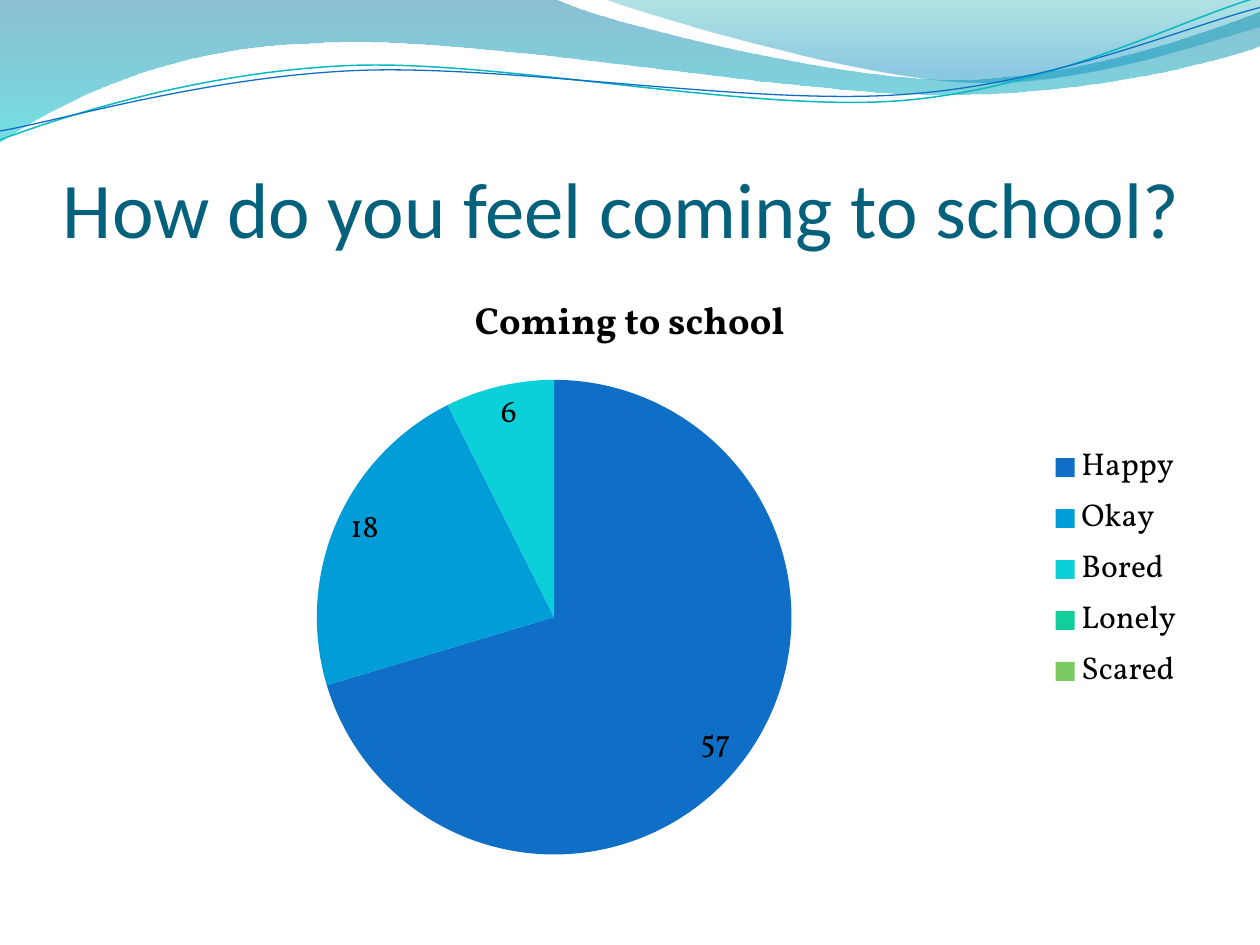
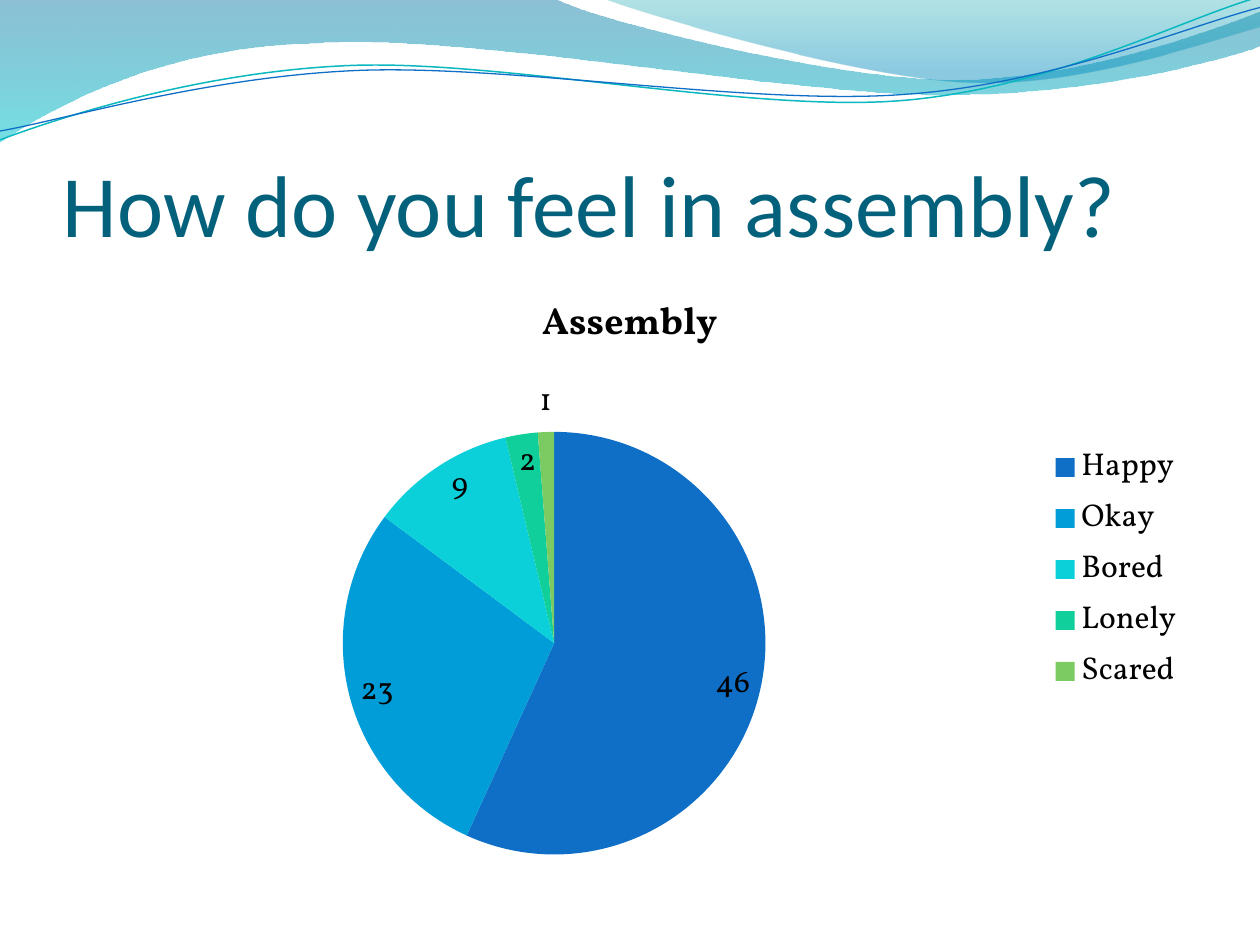
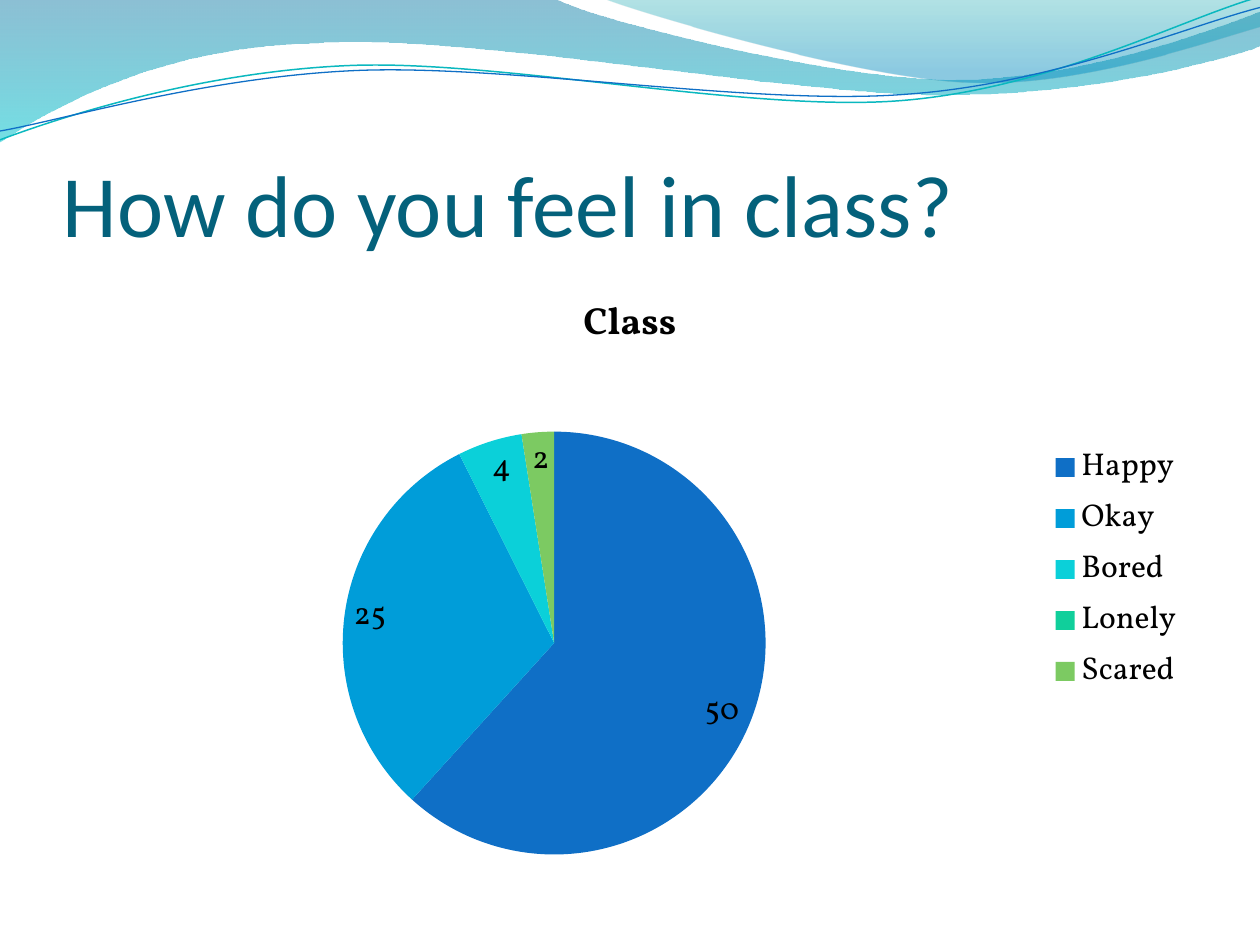
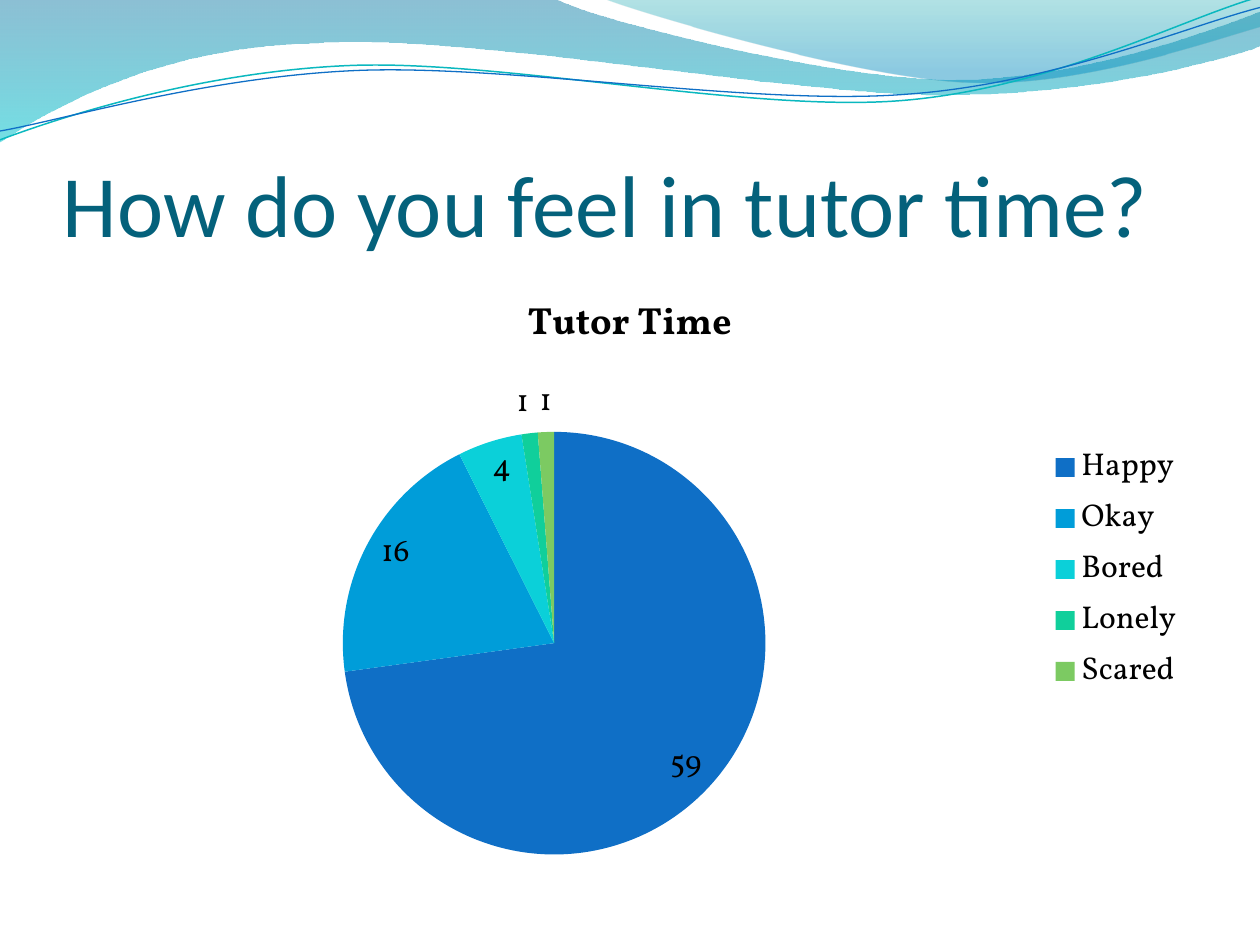
from dataclasses import dataclass
from math import cos, radians, sin

from lxml.etree import SubElement
from pptx import Presentation
from pptx.chart.data import CategoryChartData
from pptx.dml.color import RGBColor
from pptx.enum.chart import XL_CHART_TYPE as ChartType
from pptx.enum.chart import XL_LABEL_POSITION as LabelPosition
from pptx.enum.chart import XL_LEGEND_POSITION as LegendPosition
from pptx.enum.text import MSO_ANCHOR as Anchor
from pptx.oxml import parse_xml
from pptx.oxml.ns import nsdecls, qn
from pptx.shapes.autoshape import Shape
from pptx.slide import Slide
from pptx.util import Inches, Pt

Point = tuple[float, float]
# A segment of one point is a straight line, of three points a Bézier curve
Segment = tuple[Point, ...]

TITLE_FONT, CHART_FONT = "Calibri", "Vollkorn"
TITLE_TEAL = RGBColor(0x04, 0x61, 0x7B)
BLACK = RGBColor(0x00, 0x00, 0x00)
BLUE = RGBColor(0x0F, 0x6F, 0xC6)
TURQUOISE = RGBColor(0x0A, 0xB8, 0xBF)
DEEP_BLUE = RGBColor(0x00, 0x74, 0xA1)
BRIGHT_CYAN = RGBColor(0x00, 0xC6, 0xCF)
SEA_GREEN = RGBColor(0x00, 0xA1, 0xA9)
SKY_BLUE = RGBColor(0x00, 0x8B, 0xBF)

FEELINGS = {
    "Happy": BLUE,
    "Okay": RGBColor(0x00, 0x9D, 0xD9),
    "Bored": RGBColor(0x0B, 0xD0, 0xD9),
    "Lonely": RGBColor(0x10, 0xCF, 0x9B),
    "Scared": RGBColor(0x7C, 0xCA, 0x62),
}


@dataclass(frozen=True)
class GradientStop:
    position: float
    color: RGBColor
    opacity: int  # percent


@dataclass(frozen=True)
class Wave:
    start: Point
    segments: tuple[Segment, ...]
    stops: tuple[GradientStop, GradientStop]


@dataclass(frozen=True)
class Ripple:
    start: Point
    segments: tuple[Segment, ...]
    center: Point
    color: RGBColor
    width: float


@dataclass(frozen=True)
class Survey:
    question: str
    place: str
    votes: tuple[int, ...]
    title_size: int = 50


WAVES = (
    Wave(
        (0, 0),
        (
            ((4.4, -0.01),),
            ((4.76, 0.17), (6.64, 0.63), (7.58, 0.63)),
            ((8.53, 0.63), (9.58, 0.26), (10, 0.09)),
            ((10.01, 0.36),),
            ((9.83, 0.44), (8.7, 0.76), (7.46, 0.75)),
            ((6.22, 0.75), (3.82, 0.28), (2.57, 0.34)),
            ((1.29, 0.36), (0.46, 0.83), (-0.01, 1.13)),
        ),
        (GradientStop(0, DEEP_BLUE, 45), GradientStop(1, BRIGHT_CYAN, 55)),
    ),
    Wave(
        (4.79, -0.01),
        (
            ((5.09, 0.11), (6.82, 0.62), (7.69, 0.65)),
            ((8.56, 0.69), (9.61, 0.32), (10, 0.21)),
            ((10, 0),),
        ),
        (GradientStop(0, SEA_GREEN, 30), GradientStop(0.8, SKY_BLUE, 45)),
    ),
)

RIPPLE_TILT = -2.7  # degrees
RIPPLES = (
    Ripple(
        (0, 1.11),
        (
            ((0.48, 0.93), (1.58, 0.57), (2.77, 0.52)),
            ((3.95, 0.47), (5.93, 0.89), (7.13, 0.8)),
            ((8.33, 0.71), (9.38, 0.15), (9.98, -0.02)),
        ),
        (4.99, 0.58), TURQUOISE, 0.85,
    ),
    Ripple(
        (0, 1.04),
        (
            ((0.47, 0.96), (1.64, 0.61), (2.83, 0.56)),
            ((4.03, 0.51), (5.97, 0.84), (7.17, 0.75)),
            ((8.36, 0.67), (9.41, 0.21), (10, 0.06)),
        ),
        (5, 0.59), BLUE, 0.75,
    ),
)

SURVEYS = (
    Survey("How do you feel coming to school?", "Coming to school", (57, 18, 6, 0, 0), 45),
    Survey("How do you feel in assembly?", "Assembly", (46, 23, 9, 2, 1)),
    Survey("How do you feel in class?", "Class", (50, 25, 4, 0, 2)),
    Survey("How do you feel in tutor time?", "Tutor Time", (59, 16, 4, 1, 1)),
)


def draw_path(slide: Slide, start: Point, segments: tuple[Segment, ...], close: bool) -> Shape:
    """Build the outline through all points, then turn each triple into a curve."""
    builder = slide.shapes.build_freeform(Inches(start[0]), Inches(start[1]))
    points = [(Inches(x), Inches(y)) for segment in segments for x, y in segment]
    builder.add_line_segments(points, close=close)
    outline = builder.convert_to_shape()
    outline.shadow.inherit = False

    steps = iter(list(outline.element.iter(qn("a:lnTo"))))
    for segment in segments:
        first, *others = [next(steps) for _ in segment]
        if others:
            curve = parse_xml(f"<a:cubicBezTo {nsdecls('a')}/>")
            first.addprevious(curve)
            for step in (first, *others):
                curve.append(step[0])
                step.getparent().remove(step)
    return outline


def draw_wave(slide: Slide, wave: Wave) -> None:
    band = draw_path(slide, wave.start, wave.segments, close=True)
    band.line.fill.background()
    band.fill.gradient()
    band.fill.gradient_angle = 270
    for target, stop in zip(band.fill.gradient_stops, wave.stops):
        target.position = stop.position
        target.color.rgb = stop.color
    for color, stop in zip(band.element.iter(qn("a:srgbClr")), wave.stops):
        SubElement(color, qn("a:alpha"), val=str(stop.opacity * 1000))


def draw_ripple(slide: Slide, ripple: Ripple) -> None:
    """Level the curve about its center, then tilt the shape."""
    center_x, center_y = ripple.center
    cosine, sine = cos(radians(-RIPPLE_TILT)), sin(radians(-RIPPLE_TILT))

    def level(point: Point) -> Point:
        dx, dy = point[0] - center_x, point[1] - center_y
        return center_x + dx * cosine - dy * sine, center_y + dx * sine + dy * cosine

    segments = tuple(tuple(map(level, segment)) for segment in ripple.segments)
    curve = draw_path(slide, level(ripple.start), segments, close=False)
    curve.rotation = RIPPLE_TILT
    curve.fill.background()
    curve.line.color.rgb = ripple.color
    curve.line.width = Pt(ripple.width)


def draw_title(slide: Slide, survey: Survey) -> None:
    frame = slide.shapes.add_textbox(Inches(0.5), Inches(0.77), Inches(9), Inches(1.25)).text_frame
    frame.word_wrap = True
    frame.vertical_anchor = Anchor.BOTTOM
    frame.margin_left = frame.margin_right = frame.margin_bottom = 0
    frame.margin_top = Inches(0.05)
    question = frame.paragraphs[0]
    question.text = survey.question
    question.font.name = TITLE_FONT
    question.font.size = Pt(survey.title_size)
    question.font.color.rgb = TITLE_TEAL


def draw_pie(slide: Slide, survey: Survey) -> None:
    data = CategoryChartData(number_format="General")
    data.categories = list(FEELINGS)
    data.add_series(survey.place, survey.votes)
    chart = slide.shapes.add_chart(
        ChartType.PIE, Inches(0.5), Inches(2.12), Inches(9), Inches(4.8), data
    ).chart
    chart.font.name = CHART_FONT
    chart.font.size = Pt(18)
    chart.font.color.rgb = BLACK

    # Heading and legend
    chart.has_title = True
    heading = chart.chart_title.text_frame.paragraphs[0]
    heading.text = survey.place
    heading.font.name = CHART_FONT
    heading.font.size = Pt(21.6)
    heading.font.bold = True
    heading.font.color.rgb = BLACK
    chart.has_legend = True
    chart.legend.position = LegendPosition.RIGHT
    chart.legend.include_in_layout = False

    # Slices and their labels; feelings without votes get no label
    pie = chart.plots[0]
    pie.vary_by_categories = True
    votes = pie.series[0]
    for index, color in enumerate(FEELINGS.values()):
        slice_fill = votes.points[index].format.fill
        slice_fill.solid()
        slice_fill.fore_color.rgb = color
    labels = votes.data_labels
    labels.show_value = True
    labels.position = LabelPosition.BEST_FIT
    unvoted = [index for index, count in enumerate(survey.votes) if count == 0]
    for order, index in enumerate(unvoted):
        hidden = parse_xml(
            f'<c:dLbl {nsdecls("c")}><c:idx val="{index}"/><c:delete val="1"/></c:dLbl>'
        )
        votes.data_labels._element.insert(order, hidden)


def main() -> None:
    deck = Presentation()
    deck.slide_width, deck.slide_height = Inches(10), Inches(7.5)
    blank = deck.slide_layouts[6]
    for survey in SURVEYS:
        slide = deck.slides.add_slide(blank)
        for wave in WAVES:
            draw_wave(slide, wave)
        for ripple in RIPPLES:
            draw_ripple(slide, ripple)
        draw_title(slide, survey)
        draw_pie(slide, survey)
    deck.save("out.pptx")


if __name__ == "__main__":
    main()
